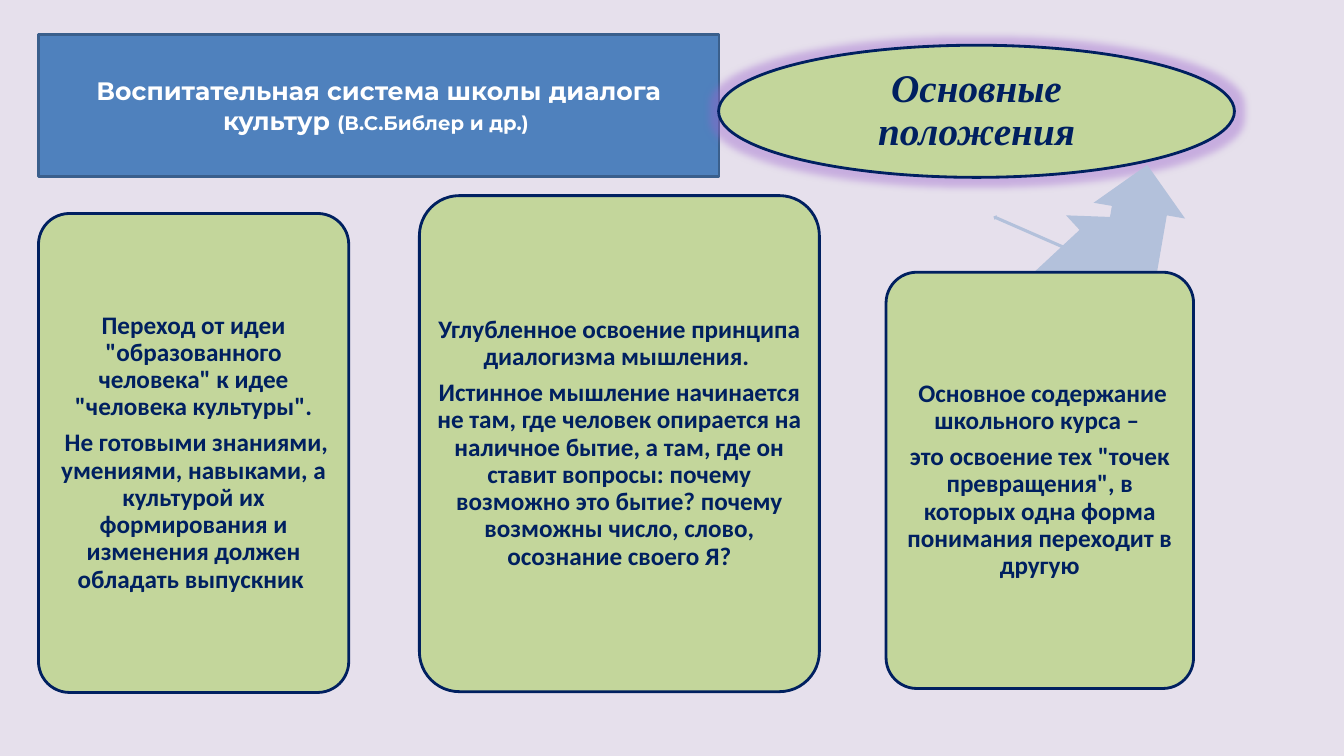
from dataclasses import dataclass

from lxml import etree
from pptx import Presentation
from pptx.dml.color import RGBColor
from pptx.enum.shapes import MSO_SHAPE
from pptx.enum.text import MSO_ANCHOR, PP_ALIGN
from pptx.oxml.ns import qn
from pptx.util import Cm, Pt

ELLIPSE = MSO_SHAPE.OVAL
CARD = MSO_SHAPE.ROUNDED_RECTANGLE
ARROW = MSO_SHAPE.RIGHT_ARROW
CENTER = PP_ALIGN.CENTER
MIDDLE = MSO_ANCHOR.MIDDLE


@dataclass(frozen=True)
class Theme:
    background: str = "E6E0EC"
    green: str = "C3D69B"
    navy: str = "002060"
    arrow: str = "B3C1DB"
    blue: str = "4F81BD"
    blue_edge: str = "3A5F8C"
    white: str = "FFFFFF"
    glow: str = "9A62CC"
    heading_size: float = 28
    body_size: float = 18
    author_size: float = 14
    edge: float = 2


theme = Theme()


def paint(shape, fill, edge=None):
    shape.fill.solid()
    shape.fill.fore_color.rgb = RGBColor.from_string(fill)
    if edge:
        shape.line.color.rgb = RGBColor.from_string(edge)
        shape.line.width = Pt(theme.edge)
    else:
        shape.line.fill.background()
    shape.shadow.inherit = False


def write(shape, paragraphs, margin, paragraph_format, color, **font_format):
    """Fill a shape with paragraphs, each a list of (text, size) runs."""
    frame = shape.text_frame
    frame_format = dict.fromkeys(
        ("margin_left", "margin_right", "margin_top", "margin_bottom"), margin)
    frame_format.update(word_wrap=True, vertical_anchor=MIDDLE)
    for key, value in frame_format.items():
        setattr(frame, key, value)
    for index, runs in enumerate(paragraphs):
        paragraph = frame.add_paragraph() if index else frame.paragraphs[0]
        for key, value in paragraph_format.items():
            setattr(paragraph, key, value)
        for text, size in runs:
            run = paragraph.add_run()
            run.text = text
            run.font.color.rgb = RGBColor.from_string(color)
            for key, value in {"size": Pt(size), "bold": True, **font_format}.items():
                setattr(run.font, key, value)


prs = Presentation()
prs.slide_width, prs.slide_height = Cm(33.87), Cm(19.05)
slide = prs.slides.add_slide(prs.slide_layouts[5])
slide.background.fill.solid()
slide.background.fill.fore_color.rgb = RGBColor.from_string(theme.background)

# Title
title = slide.shapes.title
title_box = {"left": 0.97, "top": 0.86, "width": 17.15, "height": 3.58}
for key, value in title_box.items():
    setattr(title, key, Cm(value))
paint(title, theme.blue, theme.blue_edge)
write(title,
      [[("Воспитательная система школы диалога культур ", theme.body_size),
        ("(В.С.Библер и др.) ", theme.author_size)]],
      Cm(0.25), {"alignment": CENTER}, theme.white, name="Montserrat")

# Heading ellipse with a soft glow
heading = slide.shapes.add_shape(ELLIPSE, Cm(18.11), Cm(1.14), Cm(13), Cm(3.33))
paint(heading, theme.green, theme.navy)
effects = heading.element.spPr.find(qn("a:effectLst"))
glow = etree.SubElement(effects, qn("a:glow"), rad=str(Pt(11)))
glow_color = etree.SubElement(glow, qn("a:srgbClr"), val=theme.glow)
etree.SubElement(glow_color, qn("a:alpha"), val="40000")
write(heading, [[("Основные положения", theme.heading_size)]], Cm(0.05),
      {"alignment": CENTER, "line_spacing": 0.9}, theme.navy,
      name="Times New Roman", italic=True)

# Statements: arrow box, arrow rotation, card box, paragraphs
statements = [
    ((24.94, 5.84, 2.24, 0.13), 203.6, (0.97, 5.38, 7.82, 12.07),
     ["Переход от идеи \"образованного человека\" к идее \"человека культуры\".",
      " Не готовыми знаниями, умениями, навыками, а культурой их формирования "
      "и изменения должен обладать выпускник "]),
    ((24.61, 5.82, 4.65, 2.51), 317.1, (10.57, 4.93, 10.08, 12.5),
     ["Углубленное освоение принципа диалогизма мышления. ",
      "Истинное мышление начинается не там, где человек опирается на наличное "
      "бытие, а там, где он ставит вопросы: почему возможно это бытие? почему "
      "возможны число, слово, осознание своего Я?"]),
    ((26.52, 5, 4.09, 2.34), 279.8, (22.33, 6.86, 7.75, 10.49),
     [" Основное содержание школьного курса – ",
      "это освоение тех \"точек превращения\", в которых одна форма понимания "
      "переходит в другую"]),
]
card_paragraph = {"alignment": CENTER, "line_spacing": 0.9, "space_after": Pt(6.3)}

for arrow_box, rotation, card_box, texts in statements:
    arrow = slide.shapes.add_shape(ARROW, *map(Cm, arrow_box))
    arrow.rotation = rotation
    arrow.adjustments[0], arrow.adjustments[1] = 0.6, 0.5
    paint(arrow, theme.arrow)

    card = slide.shapes.add_shape(CARD, *map(Cm, card_box))
    card.adjustments[0] = 0.1
    paint(card, theme.green, theme.navy)
    write(card, [[(text, theme.body_size)] for text in texts], Cm(0.1),
          card_paragraph, theme.navy, name="Calibri")

prs.save("out.pptx")
